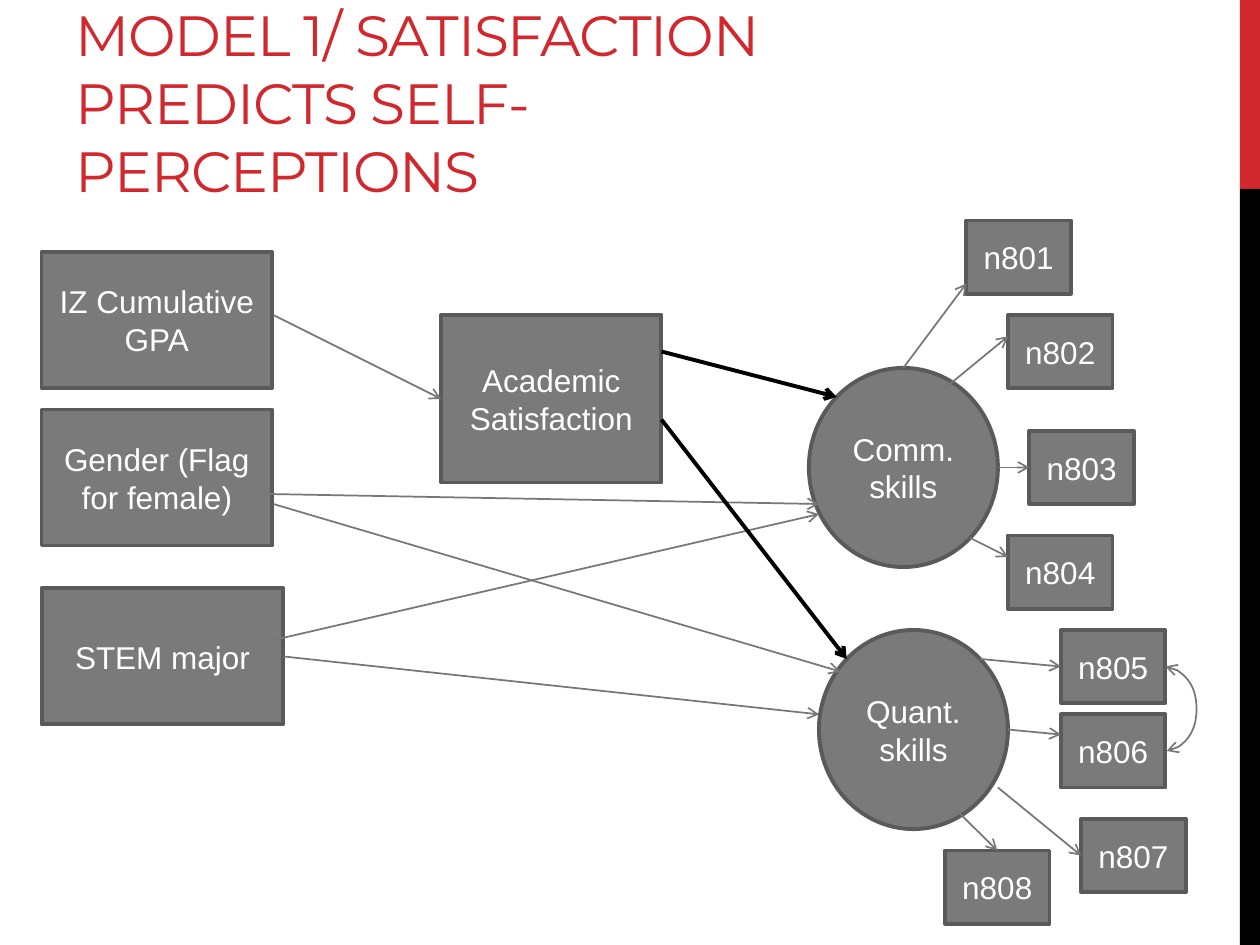
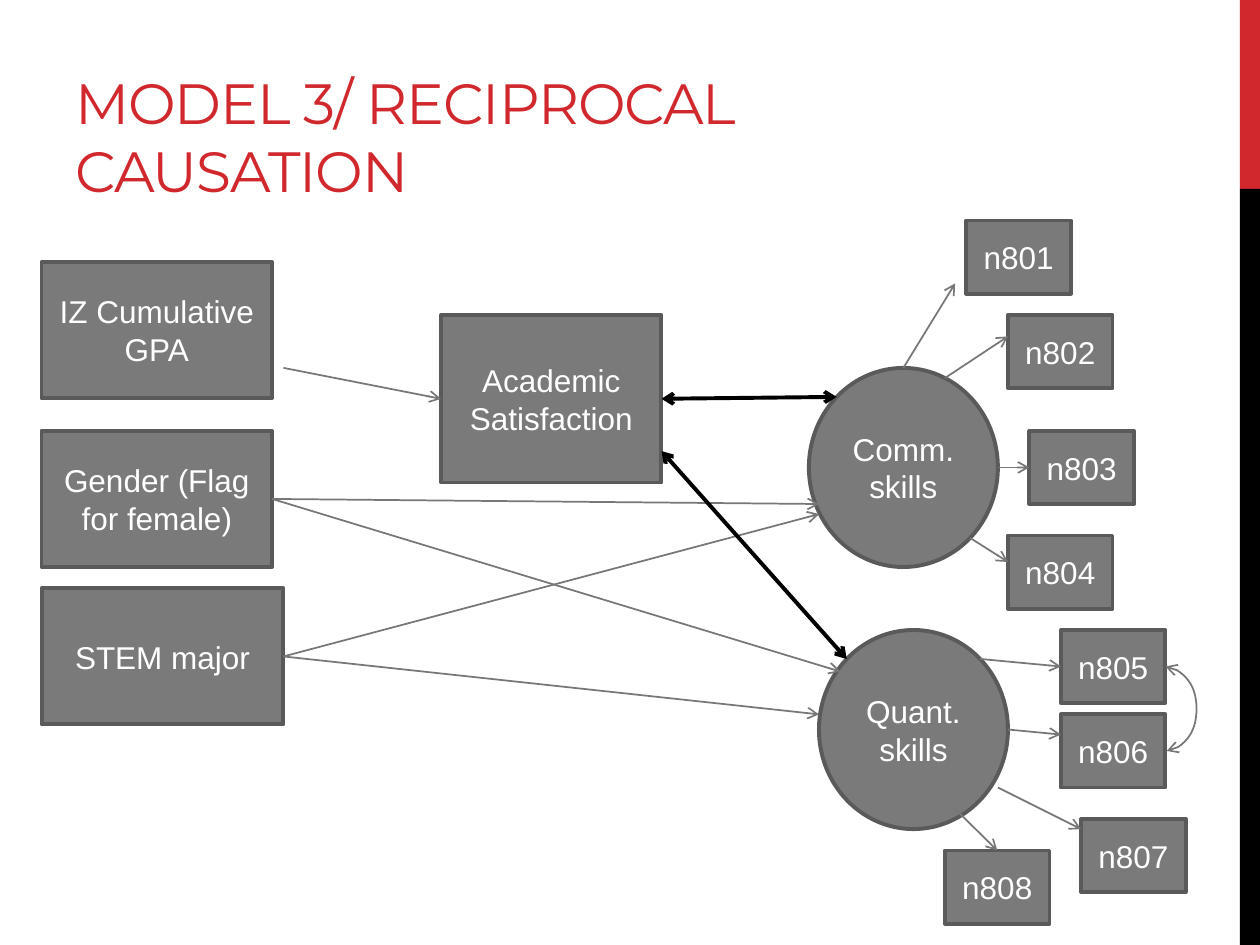
from pptx import Presentation
from pptx.dml.color import RGBColor
from pptx.enum.shapes import MSO_CONNECTOR, MSO_SHAPE
from pptx.enum.text import MSO_ANCHOR, PP_ALIGN
from pptx.oxml.ns import qn
from pptx.oxml.xmlchemy import OxmlElement
from pptx.util import Inches, Pt

COLORS = {
    "red": "D1282E", "black": "000000", "white": "FFFFFF",
    "box": "7A7A7A", "outline": "5A5A5A", "arrow": "777777",
}
TOP, LEFT, RIGHT = 0, 1, 3  # connection sites of a rectangle


def write_text(shape, text, font="Arial", size=18, color="white",
               align=PP_ALIGN.CENTER, anchor=MSO_ANCHOR.MIDDLE, spacing=None):
    frame = shape.text_frame
    frame.word_wrap = True
    frame.vertical_anchor = anchor
    paragraph = frame.paragraphs[0]
    paragraph.alignment = align
    run = paragraph.add_run()
    run.text = text
    run.font.name = font
    run.font.size = Pt(size)
    run.font.color.rgb = RGBColor.from_string(COLORS[color])
    if spacing is not None:
        run.font._element.set("spc", str(round(spacing * 100)))


def add_arrow(slide, boxes, start, end, color="arrow", width=1,
              both_ends=False, kind=MSO_CONNECTOR.STRAIGHT):
    """Each end is an (x, y) point in inches or a (box name, site) pair."""
    start_glued, end_glued = isinstance(start[0], str), isinstance(end[0], str)
    start_point = (0, 0) if start_glued else start
    end_point = (0, 0) if end_glued else end
    arrow = slide.shapes.add_connector(
        kind, *[Inches(value) for value in (*start_point, *end_point)])
    if start_glued:
        arrow.begin_connect(boxes[start[0]], start[1])
    if end_glued:
        arrow.end_connect(boxes[end[0]], end[1])
    arrow.line.color.rgb = RGBColor.from_string(COLORS[color])
    arrow.line.width = Pt(width)
    properties = arrow._element.spPr
    for tag in ("a:headEnd", "a:tailEnd") if both_ends else ("a:tailEnd",):
        tip = OxmlElement(tag)
        tip.set("type", "arrow")
        properties.find(qn("a:ln")).append(tip)
    properties.append(OxmlElement("a:effectLst"))
    return arrow


# Side bands: top, height, color
bands = [(0, 1.5, "red"), (1.5, 6, "black")]

# Boxes on both slides: text, shape, left, top, width, height
shared_boxes = [
    ("STEM major", MSO_SHAPE.RECTANGLE, 0.33, 4.67, 1.92, 1.08),
    ("Academic Satisfaction", MSO_SHAPE.RECTANGLE, 3.5, 2.5, 1.75, 1.33),
    ("Quant. skills", MSO_SHAPE.FLOWCHART_CONNECTOR, 6.5, 5, 1.5, 1.58),
    ("Comm. skills", MSO_SHAPE.FLOWCHART_CONNECTOR, 6.42, 2.92, 1.5, 1.58),
]
indicator_corners = [(7.67, 1.75), (8, 2.5), (8.17, 3.42), (8, 4.25),
                     (8.42, 5), (8.42, 5.67), (8.58, 6.5), (7.5, 6.75)]
for number, corner in enumerate(indicator_corners, start=801):
    shared_boxes.append(
        (f"n{number}", MSO_SHAPE.FLOWCHART_PROCESS, *corner, 0.83, 0.58))

# Thin arrows on both slides
shared_arrows = [
    (("STEM major", RIGHT), (6.5, 5.67)),
    ((7.92, 3.71), ("n803", LEFT)),
    ((7.78, 5.23), ("n805", LEFT)),
    ((8, 5.79), (8.42, 5.83)),
    ((7.58, 6.42), ("n808", TOP)),
]

# What differs between the models
models = [
    {
        "title": "MODEL 1/ SATISFACTION PREDICTS SELF-PERCEPTIONS",
        "gpa_top": 2, "gender_top": 3.25,
        "arrows": [
            ((2.17, 2.5), ("Academic Satisfaction", LEFT)),
            ((2.08, 3.92), (6.5, 4)),
            ((2.17, 4), (6.67, 5.33)),
            ((2.17, 5.08), (6.5, 4.08)),
            ((7.17, 2.92), (7.67, 2.25)),
            ((7.5, 3.08), (8, 2.67)),
            ((7.7, 4.27), (8, 4.42)),
            ((7.92, 6.25), ("n807", LEFT)),
        ],
        "key_arrows": [((5.25, 2.79), (6.64, 3.15)),
                       ((5.25, 3.33), (6.72, 5.23))],
        "reciprocal": False,
    },
    {
        "title": "MODEL 3/ RECIPROCAL CAUSATION",
        "gpa_top": 2.08, "gender_top": 3.42,
        "arrows": [
            ((2.25, 2.92), ("Academic Satisfaction", LEFT)),
            (("Gender (Flag for female)", RIGHT), (6.5, 4)),
            (("Gender (Flag for female)", RIGHT), (6.67, 5.33)),
            (("STEM major", RIGHT), (6.5, 4.08)),
            ((7.17, 2.92), (7.58, 2.25)),
            ((7.5, 3), (8, 2.67)),
            ((7.7, 4.27), (8, 4.46)),
            ((7.92, 6.25), (8.58, 6.58)),
        ],
        "key_arrows": [((6.64, 3.15), ("Academic Satisfaction", RIGHT)),
                       ((5.25, 3.58), (6.72, 5.23))],
        "reciprocal": True,
    },
]

presentation = Presentation()
presentation.slide_width = Inches(10)
presentation.slide_height = Inches(7.5)

for model in models:
    slide = presentation.slides.add_slide(presentation.slide_layouts[6])

    # Bands and title
    for top, height, color in bands:
        band = slide.shapes.add_shape(
            MSO_SHAPE.RECTANGLE, Inches(9.84), Inches(top), Inches(0.16), Inches(height))
        band.shadow.inherit = False
        band.fill.solid()
        band.fill.fore_color.rgb = RGBColor.from_string(COLORS[color])
        band.line.fill.background()
    title = slide.shapes.add_textbox(
        Inches(0.5), Inches(0.17), Inches(6.33), Inches(1.5))
    write_text(title, model["title"], font="Montserrat", size=32.4, color="red",
               align=PP_ALIGN.LEFT, anchor=MSO_ANCHOR.BOTTOM, spacing=-0.6)

    # Variables, factors and indicators
    predictors = [
        ("Gender (Flag for female)", MSO_SHAPE.RECTANGLE,
         0.33, model["gender_top"], 1.83, 1.08),
        ("IZ Cumulative GPA", MSO_SHAPE.RECTANGLE,
         0.33, model["gpa_top"], 1.83, 1.08),
    ]
    boxes = {}
    for text, kind, *place in predictors + shared_boxes:
        box = slide.shapes.add_shape(kind, *[Inches(value) for value in place])
        box.shadow.inherit = False
        box.fill.solid()
        box.fill.fore_color.rgb = RGBColor.from_string(COLORS["box"])
        box.line.color.rgb = RGBColor.from_string(COLORS["outline"])
        box.line.width = Pt(2.25)
        write_text(box, text)
        boxes[text] = box

    # Paths
    for start, end in shared_arrows + model["arrows"]:
        add_arrow(slide, boxes, start, end)
    for start, end in model["key_arrows"]:
        add_arrow(slide, boxes, start, end, color="black", width=2.25,
                  both_ends=model["reciprocal"])

    # Correlated errors: the curve bulges 0.25 inch, 25 times its own width
    curve = add_arrow(slide, boxes, (9.25, 5.29), (9.26, 5.96), both_ends=True,
                      kind=MSO_CONNECTOR.CURVE)
    geometry = curve._element.spPr.find(qn("a:prstGeom"))
    guide = OxmlElement("a:gd")
    guide.set("name", "adj1")
    guide.set("fmla", "val 2500000")
    geometry.get_or_add_avLst().append(guide)

presentation.save("out.pptx")
